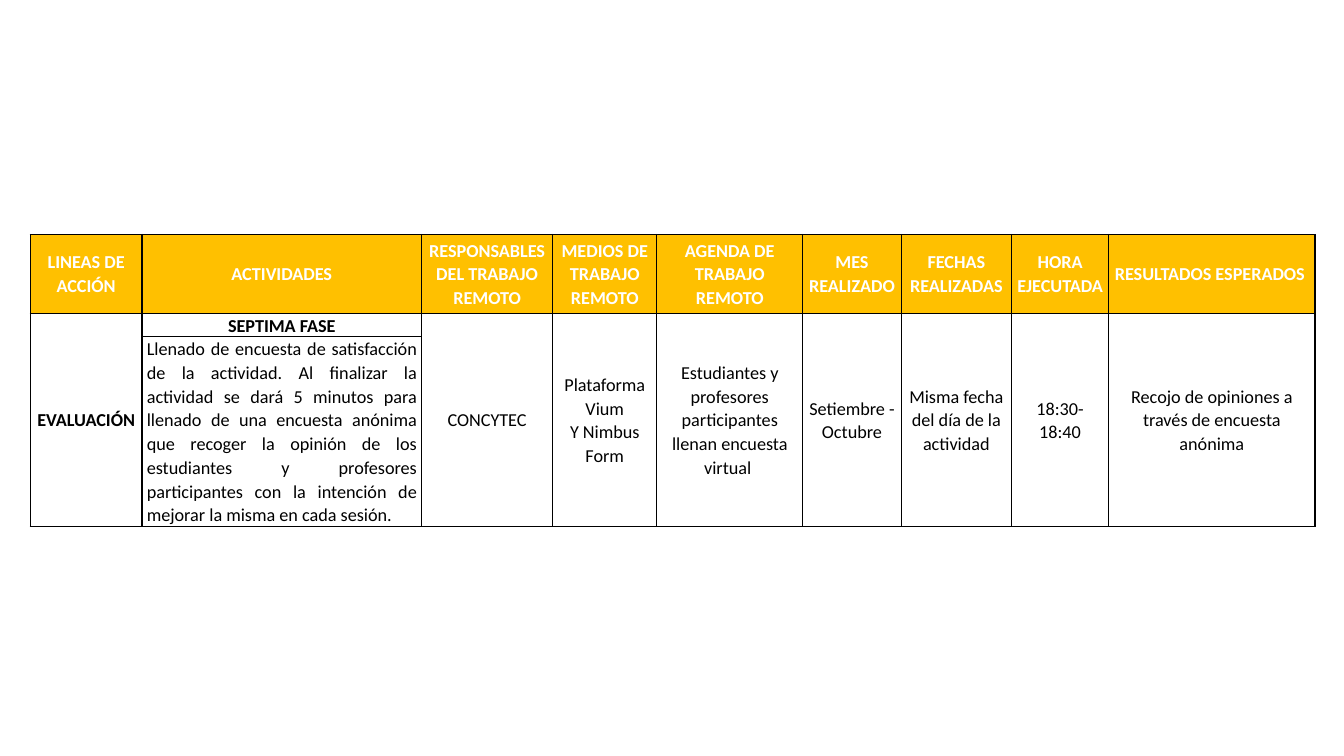
"""Build a slide with the evaluation phase of a remote work plan."""

from dataclasses import dataclass

import lxml.etree
import pptx
import pptx.dml.color
import pptx.enum.text
import pptx.oxml.ns
import pptx.table
import pptx.util

Cm = pptx.util.Cm
Pt = pptx.util.Pt
RGBColor = pptx.dml.color.RGBColor
Align = pptx.enum.text.PP_ALIGN

WHITE = RGBColor(0xFF, 0xFF, 0xFF)
BLACK = RGBColor(0x00, 0x00, 0x00)
AMBER = RGBColor(0xFF, 0xC0, 0x00)

FONT_NAME = "Calibri"
FONT_SIZE = Pt(13)
LINE_SPACING = 1.07
BORDER_WIDTH = Pt(1)
ROW_HEIGHTS = (1.98, 0.38, 3.58)
ACTIVITY_COLUMN = 1


@dataclass(frozen=True)
class PlanColumn:
    """Heading, width in centimetres and content of one column."""

    heading: str
    width: float
    content: str
    bold: bool = False


PLAN_COLUMNS = (
    PlanColumn("LINEAS DE ACCIÓN", 2.82, "EVALUACIÓN", bold=True),
    PlanColumn("ACTIVIDADES", 7.04, "SEPTIMA FASE", bold=True),
    PlanColumn("RESPONSABLES DEL TRABAJO REMOTO", 3.31, "CONCYTEC"),
    PlanColumn("MEDIOS DE TRABAJO REMOTO", 2.62, "Plataforma Vium\nY Nimbus Form"),
    PlanColumn(
        "AGENDA DE TRABAJO REMOTO",
        3.68,
        "Estudiantes y profesores participantes llenan encuesta virtual ",
    ),
    PlanColumn("MES REALIZADO", 2.48, "Setiembre - Octubre"),
    PlanColumn("FECHAS REALIZADAS", 2.78, "Misma fecha del día de la actividad"),
    PlanColumn("HORA EJECUTADA ", 2.45, "18:30-18:40"),
    PlanColumn(
        "RESULTADOS ESPERADOS ",
        5.2,
        "Recojo de opiniones a través de encuesta anónima",
    ),
)

ACTIVITY_TEXT = (
    "Llenado de encuesta de satisfacción de la actividad. Al finalizar la "
    "actividad se dará 5 minutos para llenado de una encuesta anónima que "
    "recoger la opinión de los estudiantes y profesores participantes con la "
    "intención de mejorar la misma en cada sesión."
)


def add_borders(cell: pptx.table._Cell) -> None:
    """Draw a black line on each side of a cell."""
    qualified = pptx.oxml.ns.qn
    properties = cell._tc.get_or_add_tcPr()
    for side in ("a:lnL", "a:lnR", "a:lnT", "a:lnB"):
        line = lxml.etree.SubElement(
            properties, qualified(side), w=str(int(BORDER_WIDTH))
        )
        fill = lxml.etree.SubElement(line, qualified("a:solidFill"))
        lxml.etree.SubElement(fill, qualified("a:srgbClr"), val=str(BLACK))


def write_cell(
    cell: pptx.table._Cell,
    text: str,
    color: RGBColor = BLACK,
    bold: bool = False,
    alignment: Align = Align.CENTER,
) -> None:
    """Write and format the text of a cell."""
    cell.vertical_anchor = pptx.enum.text.MSO_ANCHOR.MIDDLE
    cell.margin_left = cell.margin_right = Cm(0.12)
    cell.margin_top = cell.margin_bottom = Cm(0)
    cell.text_frame.text = text
    for paragraph in cell.text_frame.paragraphs:
        paragraph.alignment = alignment
        paragraph.line_spacing = LINE_SPACING
        for run in paragraph.runs:
            run.font.name = FONT_NAME
            run.font.size = FONT_SIZE
            run.font.bold = bold
            run.font.color.rgb = color


def style_cells(table: pptx.table.Table) -> None:
    """Give all cells borders and fill only the heading row."""
    for row_index, row in enumerate(table.rows):
        for cell in row.cells:
            add_borders(cell)
            if row_index == 0:
                cell.fill.solid()
                cell.fill.fore_color.rgb = AMBER
            else:
                cell.fill.background()


def main() -> None:
    """Create the presentation and save it."""
    presentation = pptx.Presentation()
    presentation.slide_width = Cm(33.87)
    presentation.slide_height = Cm(19.05)
    slide = presentation.slides.add_slide(presentation.slide_layouts[6])

    table_width = sum(column.width for column in PLAN_COLUMNS)
    table = slide.shapes.add_table(
        len(ROW_HEIGHTS),
        len(PLAN_COLUMNS),
        Cm(0.76),
        Cm(5.91),
        Cm(table_width),
        Cm(sum(ROW_HEIGHTS)),
    ).table
    table.first_row = False
    table.horz_banding = False
    for row, height in zip(table.rows, ROW_HEIGHTS):
        row.height = Cm(height)

    style_cells(table)
    for index, column in enumerate(PLAN_COLUMNS):
        table.columns[index].width = Cm(column.width)
        write_cell(table.cell(0, index), column.heading, WHITE, bold=True)
        write_cell(table.cell(1, index), column.content, bold=column.bold)
        if index != ACTIVITY_COLUMN:
            table.cell(1, index).merge(table.cell(2, index))
    write_cell(
        table.cell(2, ACTIVITY_COLUMN), ACTIVITY_TEXT, alignment=Align.JUSTIFY
    )

    presentation.save("out.pptx")


if __name__ == "__main__":
    main()
